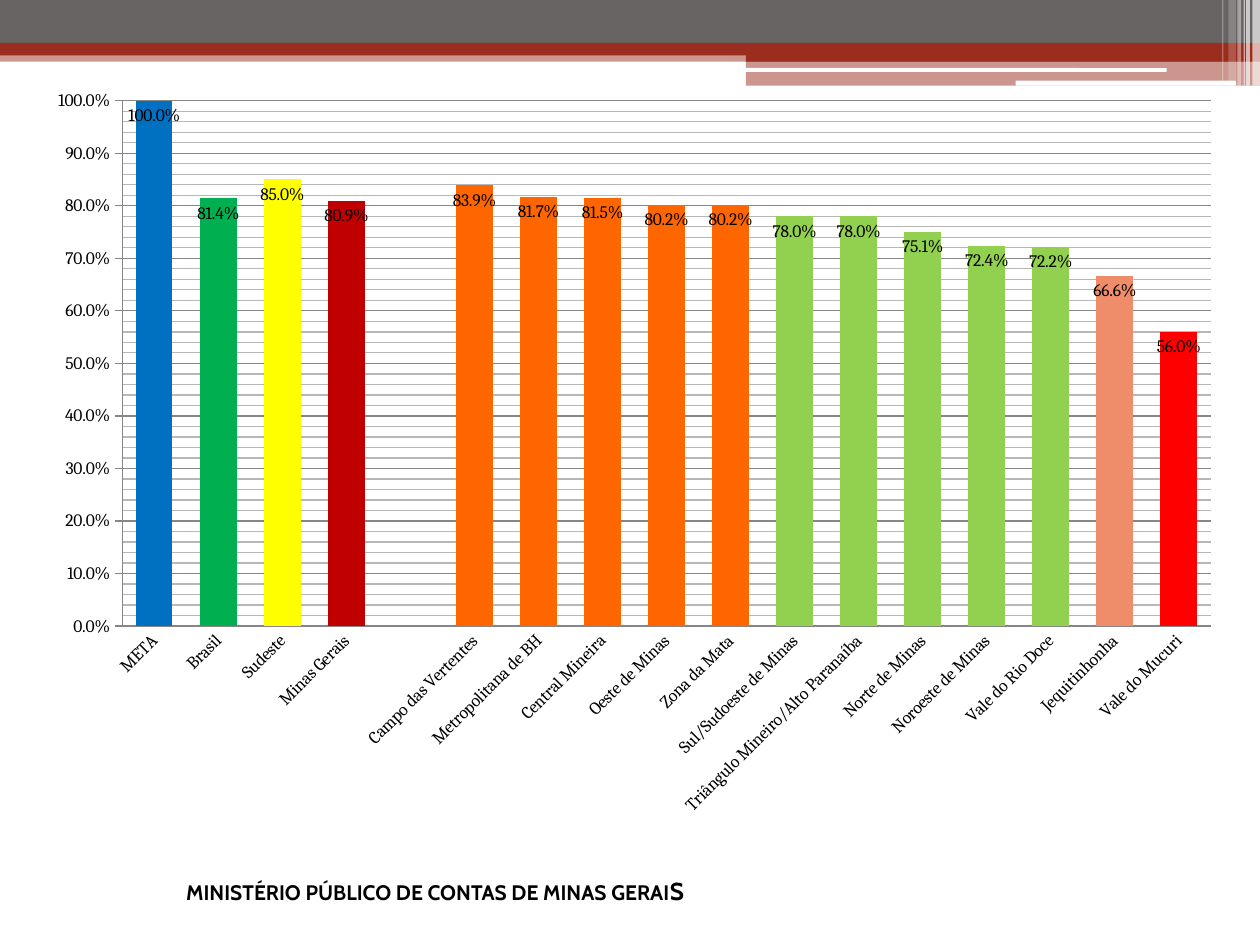
from lxml import etree
from pptx import Presentation
from pptx.chart.data import CategoryChartData
from pptx.dml.color import RGBColor
from pptx.enum.chart import XL_CHART_TYPE, XL_LABEL_POSITION, XL_TICK_MARK
from pptx.enum.shapes import MSO_SHAPE
from pptx.oxml import parse_xml
from pptx.oxml.ns import nsdecls, qn
from pptx.util import Inches, Pt

RECTANGLE, ROUNDED = MSO_SHAPE.RECTANGLE, MSO_SHAPE.ROUNDED_RECTANGLE
STACKED = XL_CHART_TYPE.COLUMN_STACKED
INSIDE_END = XL_LABEL_POSITION.INSIDE_END
TICK_NONE, TICK_CROSS = XL_TICK_MARK.NONE, XL_TICK_MARK.CROSS

THEME = {
    "gray": "696464", "red": "9B2D1F", "white": "FFFFFF", "text": "000000",
    "axis": "868686", "minor_grid": "B7B7B7",
    "goal": "0070C0", "country": "00B050", "southeast": "FFFF00", "state": "C00000",
    "high": "FF6600", "medium": "92D050", "low": "EF8C6A", "lowest": "FF0000",
    "chart_font": "Cambria", "footer_font": "Cabin",
    "chart_size": 10, "footer_size": 12, "footer_end_size": 14,
}

# left, top, width, height, colour, opacity in percent
BANDS = [
    (0, 0.4, 10, 0.09, "red", 50),
    (0, 0, 10, 0.34, "gray", 100),
    (0, 0.34, 10, 0.1, "red", 100),
    (5.92, 0.39, 4.08, 0.1, "red", 100),
    (5.92, 0.48, 4.08, 0.2, "red", 50),
]
WHITE_BARS = [(5.91, 0.54, 3.35, 0.03), (8.06, 0.64, 1.75, 0.04)]
# left, width, height, opacity in percent
STRIPES = [
    (9.94, 0.06, 0.68, 65), (9.89, 0.03, 0.68, 65), (9.87, 0.01, 0.68, 60),
    (9.82, 0.03, 0.68, 40), (9.75, 0.06, 0.64, 20), (9.7, 0.01, 0.64, 30),
]

COLUMNS = [
    ("META", 1, "goal"),
    ("Brasil", 0.814, "country"),
    ("Sudeste", 0.85, "southeast"),
    ("Minas Gerais", 0.809, "state"),
    ("", None, "high"),
    ("Campo das Vertentes", 0.839, "high"),
    ("Metropolitana de BH", 0.817, "high"),
    ("Central Mineira", 0.815, "high"),
    ("Oeste de Minas", 0.802, "high"),
    ("Zona da Mata", 0.802, "high"),
    ("Sul/Sudoeste de Minas", 0.78, "medium"),
    ("Triângulo Mineiro/Alto Paranaíba", 0.78, "medium"),
    ("Norte de Minas", 0.751, "medium"),
    ("Noroeste de Minas", 0.724, "medium"),
    ("Vale do Rio Doce", 0.722, "medium"),
    ("Jequitinhonha", 0.666, "low"),
    ("Vale do Mucuri", 0.56, "lowest"),
]
CHART_BOX = (0.28, 0.6, 9.53, 5.98)
PLOT_BOX = (0.97, 0.8, 8.64, 4.17)
FOOTER_BOX = (1.38, 6.9, 7.64, 0.34)
FOOTER = "MINISTÉRIO PÚBLICO DE CONTAS DE MINAS GERAI"
FOOTER_END = "S"


def color(name):
    return RGBColor.from_string(THEME[name])


def fill_solid(fill, name):
    fill.solid()
    fill.fore_color.rgb = color(name)


def add_block(slide, box, name, opacity=100, kind=RECTANGLE):
    shape = slide.shapes.add_shape(kind, *map(Inches, box))
    shape.shadow.inherit = False
    shape.line.fill.background()
    fill_solid(shape.fill, name)
    if opacity < 100:
        solid_color = shape.fill._xPr.find(qn("a:solidFill"))[0]
        etree.SubElement(solid_color, qn("a:alpha"), val=str(opacity * 1000))


def add_header(slide):
    for *box, name, opacity in BANDS:
        add_block(slide, box, name, opacity)
    for box in WHITE_BARS:
        add_block(slide, box, "white", kind=ROUNDED)
    for left, width, height, opacity in STRIPES:
        add_block(slide, (left, 0, width, height), "white", opacity)


def add_footer(slide):
    frame = slide.shapes.add_textbox(*map(Inches, FOOTER_BOX)).text_frame
    frame.word_wrap = True
    paragraph = frame.paragraphs[0]
    paragraph.font.name = THEME["footer_font"]
    paragraph.font.bold = True
    paragraph.font.color.rgb = color("text")
    for text, size in ((FOOTER, "footer_size"), (FOOTER_END, "footer_end_size")):
        run = paragraph.add_run()
        run.text = text
        run.font.size = Pt(THEME[size])


def place_plot(chart):
    """Fix the inner plot area at PLOT_BOX, as fractions of the chart."""
    left, top, width, height = CHART_BOX
    plot_left, plot_top, plot_width, plot_height = PLOT_BOX
    fractions = {
        "x": (plot_left - left) / width, "y": (plot_top - top) / height,
        "w": plot_width / width, "h": plot_height / height,
    }
    modes = "".join(f'<c:{axis}Mode val="edge"/>' for axis in "xy")
    values = "".join(f'<c:{key} val="{value:.4f}"/>' for key, value in fractions.items())
    layout = parse_xml(
        f'<c:layout {nsdecls("c")}><c:manualLayout><c:layoutTarget val="inner"/>'
        f"{modes}{values}</c:manualLayout></c:layout>")
    plot_area = chart._chartSpace.chart.plotArea
    for old_layout in plot_area.findall(qn("c:layout")):
        plot_area.remove(old_layout)
    plot_area.insert(0, layout)


def style_line(line, name):
    line.color.rgb = color(name)
    line.width = Pt(0.75)


def style_minor_gridlines(axis):
    axis.has_minor_gridlines = True
    axis._element.find(qn("c:minorGridlines")).append(parse_xml(
        f'<c:spPr {nsdecls("c", "a")}><a:ln w="{Pt(0.75)}"><a:solidFill>'
        f'<a:srgbClr val="{THEME["minor_grid"]}"/></a:solidFill></a:ln></c:spPr>'))


def style_axes(chart):
    categories, values = chart.category_axis, chart.value_axis
    categories.major_tick_mark = TICK_NONE
    categories.tick_labels.font.size = Pt(THEME["chart_size"])
    categories._element.find(qn("c:txPr")).find(qn("a:bodyPr")).set("rot", "-2700000")

    values.minimum_scale, values.maximum_scale = 0, 1
    values.major_unit, values.minor_unit = 0.1, 0.02
    values.major_tick_mark = TICK_CROSS
    values.has_major_gridlines = True
    values.tick_labels.number_format = "0.0%"
    values.tick_labels.number_format_is_linked = False
    style_line(values.major_gridlines.format.line, "axis")
    style_minor_gridlines(values)
    for axis in (categories, values):
        axis.minor_tick_mark = TICK_NONE
        style_line(axis.format.line, "axis")


def add_column_chart(slide):
    names, values, colors = zip(*COLUMNS)
    data = CategoryChartData(number_format="0.0%")
    data.categories = names
    data.add_series("Series 1", values)
    chart = slide.shapes.add_chart(STACKED, *map(Inches, CHART_BOX), data).chart
    chart.has_title = chart.has_legend = False
    chart.font.name = THEME["chart_font"]
    chart.font.size = Pt(THEME["chart_size"])
    chart.font.color.rgb = color("text")
    place_plot(chart)
    style_axes(chart)

    plot = chart.plots[0]
    plot.vary_by_categories = False
    plot.gap_width, plot.overlap = 75, 100
    series = plot.series[0]
    fill_solid(series.format.fill, "goal")
    for index, name in enumerate(colors):
        if name != "goal":
            fill_solid(series.points[index].format.fill, name)
    labels = series.data_labels
    labels.show_value = True
    labels.position = INSIDE_END
    labels.number_format = "0.0%"
    labels.number_format_is_linked = False


def main():
    presentation = Presentation()
    presentation.slide_width, presentation.slide_height = Inches(10), Inches(7.5)
    slide = presentation.slides.add_slide(presentation.slide_layouts[6])
    add_header(slide)
    add_footer(slide)
    add_column_chart(slide)
    presentation.save("out.pptx")


if __name__ == "__main__":
    main()
